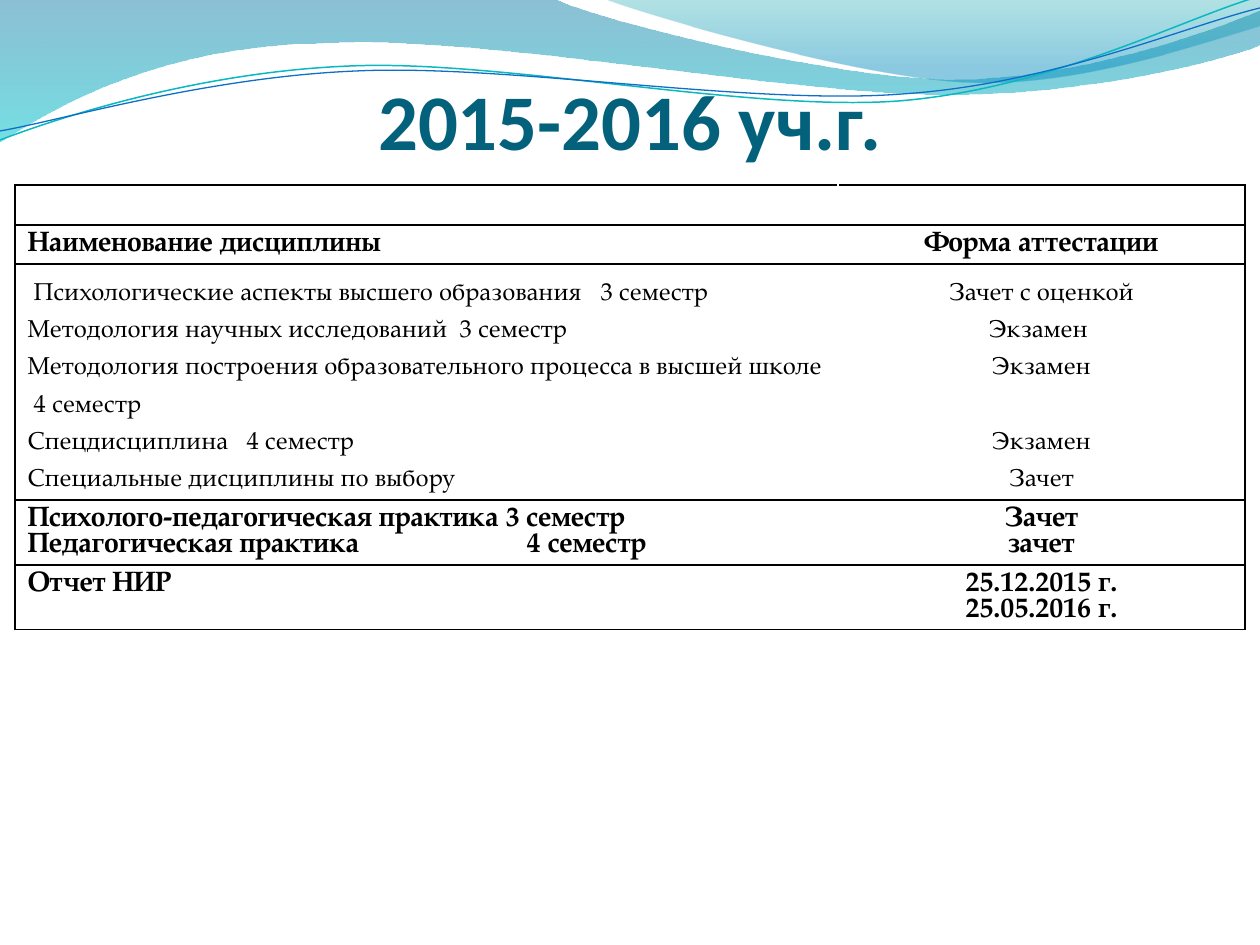
from lxml.etree import SubElement
from pptx import Presentation
from pptx.dml.color import RGBColor
from pptx.enum.text import MSO_ANCHOR as Anchor, MSO_AUTO_SIZE as AutoSize, PP_ALIGN as Align
from pptx.oxml.ns import qn
from pptx.util import Emu, Pt

PX = 914400 / 126
BODY_FONT = "TeX Gyre Pagella"
BLACK, WHITE = "000000", "FFFFFF"

# Waves: start point, then straight (2 numbers) or cubic (6 numbers) pieces
BROAD_WAVE = [(0, 0), (554, -1), (600, 21, 837, 79, 955, 79),
              (1075, 79, 1207, 33, 1260, 11), (1261, 45),
              (1239, 55, 1096, 96, 940, 94), (784, 94, 481, 35, 324, 43),
              (163, 45, 58, 105, -1, 142)]
RIGHT_WAVE = [(604, -1), (641, 14, 859, 78, 969, 82),
              (1079, 87, 1211, 40, 1260, 26), (1260, 0)]
TEAL_LINE = [(0, 140), (60, 117, 199, 72, 349, 66),
             (498, 59, 747, 112, 898, 101), (1050, 89, 1182, 19, 1257, -3)]
BLUE_LINE = [(0, 131), (59, 121, 207, 77, 357, 71),
             (508, 64, 752, 106, 903, 94), (1053, 84, 1186, 26, 1260, 8)]

# Table content: a line is its text plus optional tab, indent and gap in px
BLANK = {"size": 12}
HEADING = {"size": 16, "bold": True, "spacing": 0.95}
COURSE = {"size": 14, "bold": False, "spacing": 1.5}
COLUMN_WIDTHS = (823, 407)
ROWS = [
    (40, BLANK, [], []),
    (39, HEADING, [("Наименование дисциплины", {})], [("Форма аттестации", {})]),
    (236, COURSE,
     [("Психологические аспекты высшего образования\t3 семестр", {"indent": 6, "tab": 567}),
      ("Методология научных исследований\t3 семестр", {"tab": 432}),
      ("Методология построения образовательного процесса в высшей школе  4 семестр", {}),
      ("Спецдисциплина\t4 семестр", {"tab": 219}),
      ("Специальные дисциплины по выбору", {})],
     [("Зачет с оценкой", {}), ("Экзамен ", {}), ("Экзамен", {}),
      ("Экзамен", {"gap": 37}), ("Зачет", {})]),
    (65, HEADING,
     [("Психолого-педагогическая практика 3 семестр", {}),
      ("Педагогическая практика\t4 семестр", {"tab": 499})],
     [("Зачет", {}), ("зачет", {})]),
    (64, HEADING, [("Отчет НИР", {})],
     [("25.12.2015 г.", {}), ("25.05.2016 г.", {})]),
]


def px(length):
    return Emu(round(length * PX))


def colour(code):
    return RGBColor.from_string(code)


def apply(target, formats):
    for name, value in formats.items():
        setattr(target, name, value)


def format_font(font, name, size, code, bold):
    apply(font, {"name": name, "size": Pt(size), "bold": bold})
    font.color.rgb = colour(code)


def add_outline(slide, pieces, close):
    """Join the ends of the pieces, then bend the cubic ones."""
    start, *ends = [(px(piece[-2]), px(piece[-1])) for piece in pieces]
    builder = slide.shapes.build_freeform(*start)
    builder.add_line_segments(ends, close=close)
    outline = builder.convert_to_shape()
    outline.shadow.inherit = False
    segments = list(outline._element.iter(qn("a:lnTo")))
    for segment, piece in zip(segments, pieces[1:]):
        if len(piece) == 6:
            segment.tag = qn("a:cubicBezTo")
            segment.remove(segment[0])
            for x, y in zip(piece[::2], piece[1::2]):
                SubElement(segment, qn("a:pt"), x=str(px(x) - outline.left),
                           y=str(px(y) - outline.top))
    return outline


def add_wave(slide, pieces, stops):
    wave = add_outline(slide, pieces, True)
    wave.fill.gradient()
    wave.fill.gradient_angle = 270
    for stop, (position, code, _) in zip(wave.fill.gradient_stops, stops):
        stop.position = position
        stop.color.rgb = colour(code)
    # Opacity of each stop
    for element, (_, _, opacity) in zip(wave._element.iter(qn("a:srgbClr")), stops):
        SubElement(element, qn("a:alpha"), val=str(opacity * 1000))
    wave.line.fill.background()


def add_wave_line(slide, pieces, code, width):
    curve = add_outline(slide, pieces, False)
    curve.fill.background()
    curve.line.color.rgb = colour(code)
    curve.line.width = Pt(width)


def set_title(slide, text):
    title = slide.shapes.title
    apply(title, {"left": px(15), "top": px(56), "width": px(1230), "height": px(110)})
    frame = title.text_frame
    apply(frame, {"text": text, "vertical_anchor": Anchor.BOTTOM, "word_wrap": True,
                  "auto_size": AutoSize.NONE, "margin_left": 0, "margin_right": 0,
                  "margin_top": px(6), "margin_bottom": 0})
    paragraph = frame.paragraphs[0]
    apply(paragraph, {"alignment": Align.CENTER, "line_spacing": 0.8})
    format_font(paragraph.runs[0].font, "Calibri", 45, "04617B", True)
    # Keep the title in front of the waves
    slide.shapes._spTree.append(title._element)


def set_borders(cell, codes):
    properties = cell._tc.get_or_add_tcPr()
    for side, code in codes.items():
        line = SubElement(properties, qn(f"a:ln{side}"), w=str(Pt(1)))
        SubElement(SubElement(line, qn("a:solidFill")), qn("a:srgbClr"), val=code)


def fill_cell(cell, lines, look, alignment):
    frame = cell.text_frame
    if not lines:
        SubElement(frame.paragraphs[0]._p, qn("a:endParaRPr"), sz=str(look["size"] * 100))
    for index, (text, layout) in enumerate(lines):
        paragraph = frame.add_paragraph() if index else frame.paragraphs[0]
        apply(paragraph, {"alignment": alignment, "line_spacing": look["spacing"],
                          "space_before": px(layout.get("gap", 0))})
        properties = paragraph._p.get_or_add_pPr()
        properties.set("marL", str(px(layout.get("indent", 0))))
        if "tab" in layout:
            stops = SubElement(properties, qn("a:tabLst"))
            SubElement(stops, qn("a:tab"), pos=str(px(layout["tab"])), algn="l")
        run = paragraph.add_run()
        run.text = text
        format_font(run.font, BODY_FONT, look["size"], BLACK, look["bold"])


def add_schedule(slide):
    heights = [row[0] for row in ROWS]
    schedule = slide.shapes.add_table(len(ROWS), len(COLUMN_WIDTHS), px(15), px(185),
                                      px(sum(COLUMN_WIDTHS)), px(sum(heights))).table
    apply(schedule, {"first_row": False, "horz_banding": False})
    for column, width in zip(schedule.columns, COLUMN_WIDTHS):
        column.width = px(width)
    sides = ((Align.LEFT, {"L": BLACK, "R": WHITE}), (Align.CENTER, {"L": WHITE, "R": BLACK}))
    for row, (height, look, *contents) in zip(schedule.rows, ROWS):
        row.height = px(height)
        for cell, lines, (alignment, edges) in zip(row.cells, contents, sides):
            set_borders(cell, {**edges, "T": BLACK, "B": BLACK})
            cell.fill.background()
            fill_cell(cell, lines, look, alignment)


def main():
    deck = Presentation()
    apply(deck, {"slide_width": px(1260), "slide_height": px(945)})
    slide = deck.slides.add_slide(deck.slide_layouts[5])
    # Decorative waves
    add_wave(slide, BROAD_WAVE, [(0, "0074A1", 45), (1, "00C6CF", 55)])
    add_wave(slide, RIGHT_WAVE, [(0, "00A1A9", 30), (0.8, "008BBF", 45)])
    add_wave_line(slide, TEAL_LINE, "0AB8BF", 0.85)
    add_wave_line(slide, BLUE_LINE, "0F6FC6", 0.75)
    # Title and schedule
    set_title(slide, "2015-2016 уч.г.")
    add_schedule(slide)
    deck.save("out.pptx")


if __name__ == "__main__":
    main()
